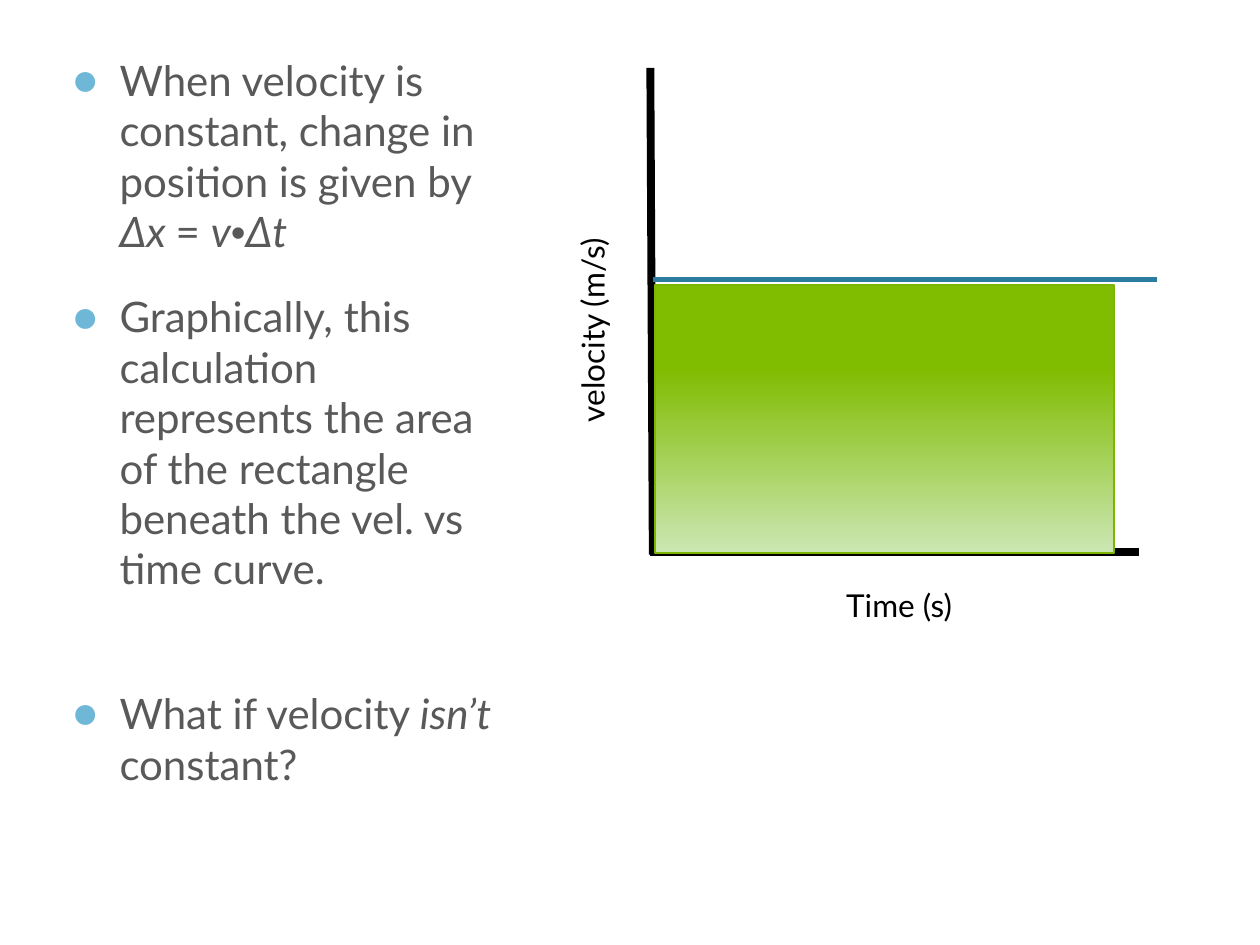
"""Build a slide on constant velocity and the area under its graph."""
from dataclasses import dataclass

from lxml.etree import SubElement
from pptx import Presentation
from pptx.dml.color import RGBColor
from pptx.enum.shapes import MSO_CONNECTOR, MSO_SHAPE
from pptx.enum.text import MSO_AUTO_SIZE
from pptx.oxml.ns import qn
from pptx.slide import Slide
from pptx.util import Cm, Pt

FONT = "Lato"
TEXT_COLOR = "595959"
BULLET_COLOR = "6FB7D7"
BLACK = "000000"


@dataclass
class Span:
    text: str
    italic: bool = False
    font: str = FONT


@dataclass
class BulletBox:
    top: float
    height: float
    paragraphs: list[list[Span]]


@dataclass
class Line:
    start: tuple[float, float]
    end: tuple[float, float]
    color: str
    width: float


@dataclass
class Label:
    text: str
    left: float
    top: float
    width: float
    rotation: float = 0


BULLET_BOXES = [
    BulletBox(0.97, 12.78, [
        [
            Span("When velocity is constant, change in position is given by "),
            Span("Δx ", True),
            Span("= "),
            Span("v", True),
            Span("•", font="Arial"),
            Span("Δt", True),
        ],
        [Span("Graphically, this calculation represents the area of the "
              "rectangle beneath the vel. vs time curve.")],
    ]),
    BulletBox(13.74, 5.03, [
        [Span("What if velocity "), Span("isn’t", True), Span(" constant?")],
    ]),
]
AXES = [
    Line((13.11, 1.37), (13.16, 11.18), BLACK, 4.5),
    Line((22.96, 11.13), (13.11, 11.13), BLACK, 4.5),
]
LABELS = [
    Label("velocity (m/s)", 9.58, 5.89, 4.72, 270),
    Label("Time (s)", 16.81, 11.68, 2.69),
]
VELOCITY_LINE = Line((13.16, 5.64), (23.32, 5.64), "2C7C9F", 3)


def rgb(color: str) -> RGBColor:
    return RGBColor.from_string(color)


def style_font(font, size: float, color: str, name: str = FONT) -> None:
    font.name = name
    font.size = Pt(size)
    font.color.rgb = rgb(color)


def add_bullet(para) -> None:
    properties = para._p.get_or_add_pPr()
    properties.set("marL", str(Cm(0.97)))
    properties.set("indent", str(-Cm(0.97)))
    color = SubElement(properties, qn("a:buClr"))
    SubElement(color, qn("a:srgbClr"), val=BULLET_COLOR)
    SubElement(properties, qn("a:buSzPct"), val="110000")
    SubElement(properties, qn("a:buFont"), typeface="Arial")
    SubElement(properties, qn("a:buChar"), char="●")


def draw_bullets(page: Slide, item: BulletBox) -> None:
    box = page.shapes.add_textbox(Cm(1.19), Cm(item.top), Cm(8.99), Cm(item.height))
    frame = box.text_frame
    frame.word_wrap = True
    for index, spans in enumerate(item.paragraphs):
        para = frame.add_paragraph() if index else frame.paragraphs[0]
        para.space_before = Pt(20)
        add_bullet(para)
        for span in spans:
            run = para.add_run()
            run.text = span.text
            run.font.italic = span.italic
            style_font(run.font, 24, TEXT_COLOR, span.font)


def draw_line(page: Slide, line: Line) -> None:
    points = [Cm(value) for value in (*line.start, *line.end)]
    connector = page.shapes.add_connector(MSO_CONNECTOR.STRAIGHT, *points)
    connector.line.color.rgb = rgb(line.color)
    connector.line.width = Pt(line.width)
    SubElement(connector._element.spPr, qn("a:effectLst"))


def draw_label(page: Slide, label: Label) -> None:
    box = page.shapes.add_textbox(
        Cm(label.left), Cm(label.top), Cm(label.width), Cm(1.02))
    box.rotation = label.rotation
    frame = box.text_frame
    frame.word_wrap = False
    frame.auto_size = MSO_AUTO_SIZE.SHAPE_TO_FIT_TEXT
    frame.text = label.text
    style_font(frame.paragraphs[0].runs[0].font, 18, BLACK)


def draw_area(page: Slide) -> None:
    area = page.shapes.add_shape(
        MSO_SHAPE.RECTANGLE, Cm(13.21), Cm(5.74), Cm(9.25), Cm(5.41))
    area.shadow.inherit = False
    area.fill.gradient()
    area.fill.gradient_angle = 270
    stops = [(0.31, "80BC00"), (1, "CBE7B4")]
    for stop, (position, color) in zip(area.fill.gradient_stops, stops):
        stop.position = position
        stop.color.rgb = rgb(color)
    area.line.color.rgb = rgb("7DB602")
    area.line.width = Pt(1)


def main() -> None:
    deck = Presentation()
    deck.slide_width, deck.slide_height = Cm(25.4), Cm(19.05)
    page = deck.slides.add_slide(deck.slide_layouts[6])
    for item in BULLET_BOXES:
        draw_bullets(page, item)
    for axis in AXES:
        draw_line(page, axis)
    for label in LABELS:
        draw_label(page, label)
    draw_line(page, VELOCITY_LINE)
    draw_area(page)
    deck.save("out.pptx")


if __name__ == "__main__":
    main()
